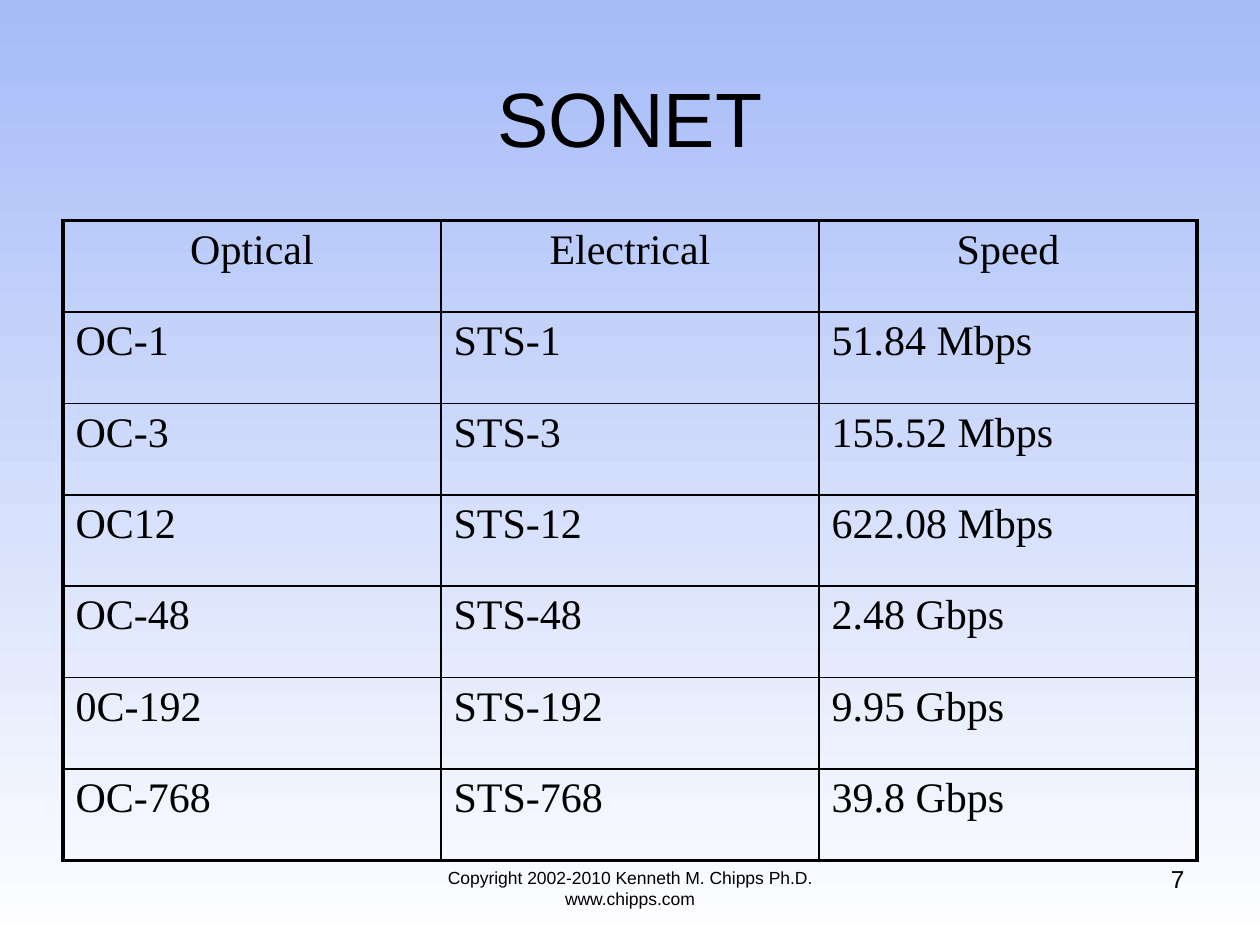
from dataclasses import dataclass

from lxml.etree import SubElement
from pptx import Presentation
from pptx.dml.color import RGBColor as Color
from pptx.enum.text import MSO_ANCHOR as Anchor, PP_ALIGN as Align
from pptx.oxml import parse_xml
from pptx.oxml.ns import nsdecls, qn
from pptx.util import Inches, Pt


@dataclass(frozen=True)
class Theme:
    ink: str = "000000"
    sky: str = "A6BBF8"
    white: str = "FFFFFF"
    sans: str = "Arial"
    serif: str = "Times New Roman"
    title: int = 44
    cell: int = 24
    footer: int = 10
    number: int = 14
    frame: float = 2.25
    rule: float = 1


THEME = Theme()
TITLE_BOX = (0.5, 0.3, 9, 1.25)
TABLE_BOX = (0.5, 1.75, 9, 5.08)
FOOTER_BOX = (3, 6.83, 4, 0.52)
NUMBER_BOX = (7.17, 6.81, 2.33, 0.52)
RATES = [
    ("Optical", "Electrical", "Speed"),
    ("OC-1", "STS-1", "51.84 Mbps"),
    ("OC-3", "STS-3", "155.52 Mbps"),
    ("OC12", "STS-12", "622.08 Mbps"),
    ("OC-48", "STS-48", "2.48 Gbps"),
    ("0C-192", "STS-192", "9.95 Gbps"),
    ("OC-768", "STS-768", "39.8 Gbps"),
]


def write(frame, text, size, face, align):
    frame.text = text
    para = frame.paragraphs[0]
    para.alignment = align
    for span in para.runs:
        span.font.size = Pt(size)
        span.font.name = face
        span.font.color.rgb = Color.from_string(THEME.ink)
    return para


def paint_background(page):
    fill = page.background.fill
    fill.gradient()
    fill.gradient_angle = 270
    for stop, position, colour in zip(fill.gradient_stops, (0, 1), (THEME.sky, THEME.white)):
        stop.position = position
        stop.color.rgb = Color.from_string(colour)


def place_title(page, box, text):
    title = page.shapes.title
    title.left, title.top, title.width, title.height = map(Inches, box)
    title.text_frame.vertical_anchor = Anchor.MIDDLE
    write(title.text_frame, text, THEME.title, THEME.sans, Align.CENTER)


def border_cell(cell, widths):
    properties = cell._tc.get_or_add_tcPr()
    for index, (side, width) in enumerate(widths.items()):
        properties.insert(index, parse_xml(
            f'<a:ln{side} {nsdecls("a")} w="{Pt(width)}"><a:solidFill>'
            f'<a:srgbClr val="{THEME.ink}"/></a:solidFill></a:ln{side}>'))


def place_table(page, box, rows):
    left, top, width, height = map(Inches, box)
    last_row, last_column = len(rows) - 1, len(rows[0]) - 1
    table = page.shapes.add_table(len(rows), len(rows[0]), left, top, width, height).table
    table.first_row = table.horz_banding = False
    for r, values in enumerate(rows):
        for c, value in enumerate(values):
            cell = table.cell(r, c)
            cell.fill.background()
            align = Align.LEFT if r else Align.CENTER
            para = write(cell.text_frame, value, THEME.cell, THEME.serif, align)
            spacing = SubElement(para._p.get_or_add_pPr(), qn("a:spcBef"))
            SubElement(spacing, qn("a:spcPct"), val="20000")
            outer = {"L": c == 0, "R": c == last_column, "T": r == 0, "B": r == last_row}
            border_cell(cell, {side: THEME.frame if edge else THEME.rule
                               for side, edge in outer.items()})


def place_note(page, box, text, size, align):
    frame = page.shapes.add_textbox(*map(Inches, box)).text_frame
    frame.word_wrap = True
    write(frame, text, size, THEME.sans, align)


def main():
    deck = Presentation()
    deck.slide_width, deck.slide_height = Inches(10), Inches(7.5)
    page = deck.slides.add_slide(deck.slide_layouts[5])
    paint_background(page)
    place_title(page, TITLE_BOX, "SONET")
    place_table(page, TABLE_BOX, RATES)
    place_note(page, FOOTER_BOX, "Copyright 2002-2010 Kenneth M. Chipps Ph.D. www.chipps.com",
               THEME.footer, Align.CENTER)
    place_note(page, NUMBER_BOX, "7", THEME.number, Align.RIGHT)
    deck.save("out.pptx")


if __name__ == "__main__":
    main()
